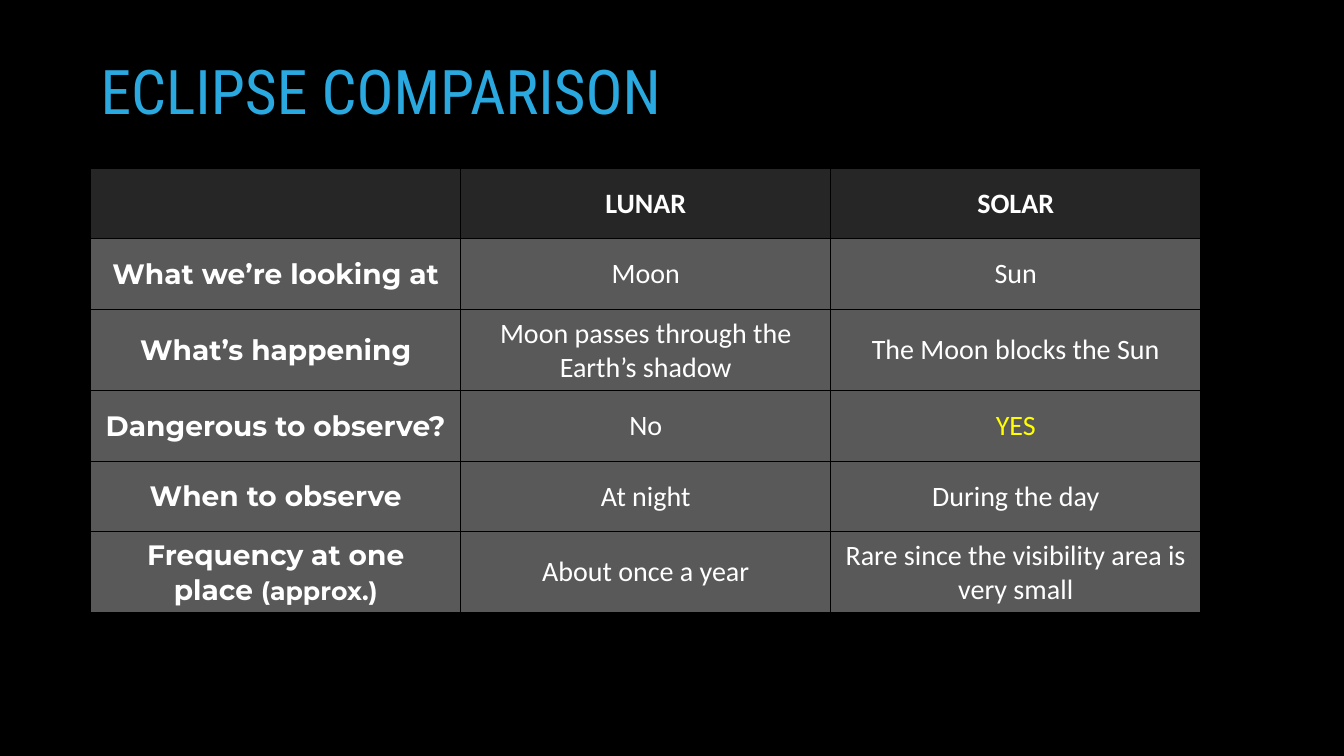
from lxml import etree
from pptx import Presentation
from pptx.dml.color import RGBColor
from pptx.enum import text
from pptx.oxml import ns
from pptx.util import Inches, Pt

TITLE = "ECLIPSE COMPARISON"
HEADINGS = ["", "LUNAR", "SOLAR"]
COMPARISON = [
    ("What we’re looking at", "Moon", "Sun"),
    ("What’s happening", "Moon passes through the Earth’s shadow", "The Moon blocks the Sun"),
    ("Dangerous to observe?", "No", "YES"),
    ("When to observe", "At night", "During the day"),
    ("Frequency at one place ", "About once a year", "Rare since the visibility area is very small"),
]
FREQUENCY_NOTE = "(approx.)"
WARNING = "YES"

COLORS = {
    "background": "000000",
    "title": "2AA9E0",
    "heading fill": "262626",
    "body fill": "595959",
    "text": "FFFFFF",
    "warning": "FFFF00",
    "border": "000000",
}
LEFT, TABLE_TOP = 0.9, 1.67
COLUMN_WIDTH, ROW_HEIGHT = 3.67, 0.7


def color(name):
    return RGBColor.from_string(COLORS[name])


def add_run(paragraph, words, font_name, size, color_name, bold=False):
    run = paragraph.add_run()
    run.text = words
    run.font.name = font_name
    run.font.size = Pt(size)
    run.font.bold = bold
    run.font.color.rgb = color(color_name)


def add_borders(cell):
    """Draw a 1 pt line on each side; line elements must come before the fill."""
    properties = cell._tc.get_or_add_tcPr()
    for position, side in enumerate(("lnL", "lnR", "lnT", "lnB")):
        line = etree.Element(ns.qn(f"a:{side}"), w=str(Pt(1)))
        fill = etree.SubElement(line, ns.qn("a:solidFill"))
        etree.SubElement(fill, ns.qn("a:srgbClr"), val=COLORS["border"])
        properties.insert(position, line)


def style_cell(cell, fill_name):
    cell.fill.solid()
    cell.fill.fore_color.rgb = color(fill_name)
    cell.vertical_anchor = text.MSO_ANCHOR.MIDDLE
    cell.margin_left = cell.margin_right = Inches(0.14)
    cell.margin_top = cell.margin_bottom = Inches(0.07)
    add_borders(cell)


def add_title(slide):
    box = slide.shapes.add_textbox(Inches(LEFT), Inches(0.21), Inches(11.5), Inches(1.45))
    frame = box.text_frame
    frame.word_wrap = True
    frame.vertical_anchor = text.MSO_ANCHOR.MIDDLE
    paragraph = frame.paragraphs[0]
    paragraph.line_spacing = 0.9
    add_run(paragraph, TITLE, "Roboto Condensed", 44, "title")


def add_comparison_table(slide):
    rows = [HEADINGS, *COMPARISON]
    table = slide.shapes.add_table(
        len(rows), len(HEADINGS), Inches(LEFT), Inches(TABLE_TOP),
        Inches(COLUMN_WIDTH * len(HEADINGS)), Inches(ROW_HEIGHT * len(rows))).table
    table.horz_banding = False
    for row_index, row in enumerate(rows):
        for column_index, words in enumerate(row):
            cell = table.cell(row_index, column_index)
            style_cell(cell, "body fill" if row_index else "heading fill")
            if not words:
                continue
            paragraph = cell.text_frame.paragraphs[0]
            paragraph.alignment = text.PP_ALIGN.CENTER
            is_label = column_index == 0
            add_run(paragraph, words, "Montserrat" if is_label else "Calibri", 20,
                    "warning" if words == WARNING else "text",
                    bold=is_label or row_index == 0)
    frequency_label = table.cell(len(rows) - 1, 0).text_frame.paragraphs[0]
    add_run(frequency_label, FREQUENCY_NOTE, "Montserrat", 18, "text", bold=True)


def main():
    presentation = Presentation()
    presentation.slide_width = Inches(13.33)
    presentation.slide_height = Inches(7.5)
    slide = presentation.slides.add_slide(presentation.slide_layouts[6])
    slide.background.fill.solid()
    slide.background.fill.fore_color.rgb = color("background")
    add_title(slide)
    add_comparison_table(slide)
    presentation.save("out.pptx")


if __name__ == "__main__":
    main()
